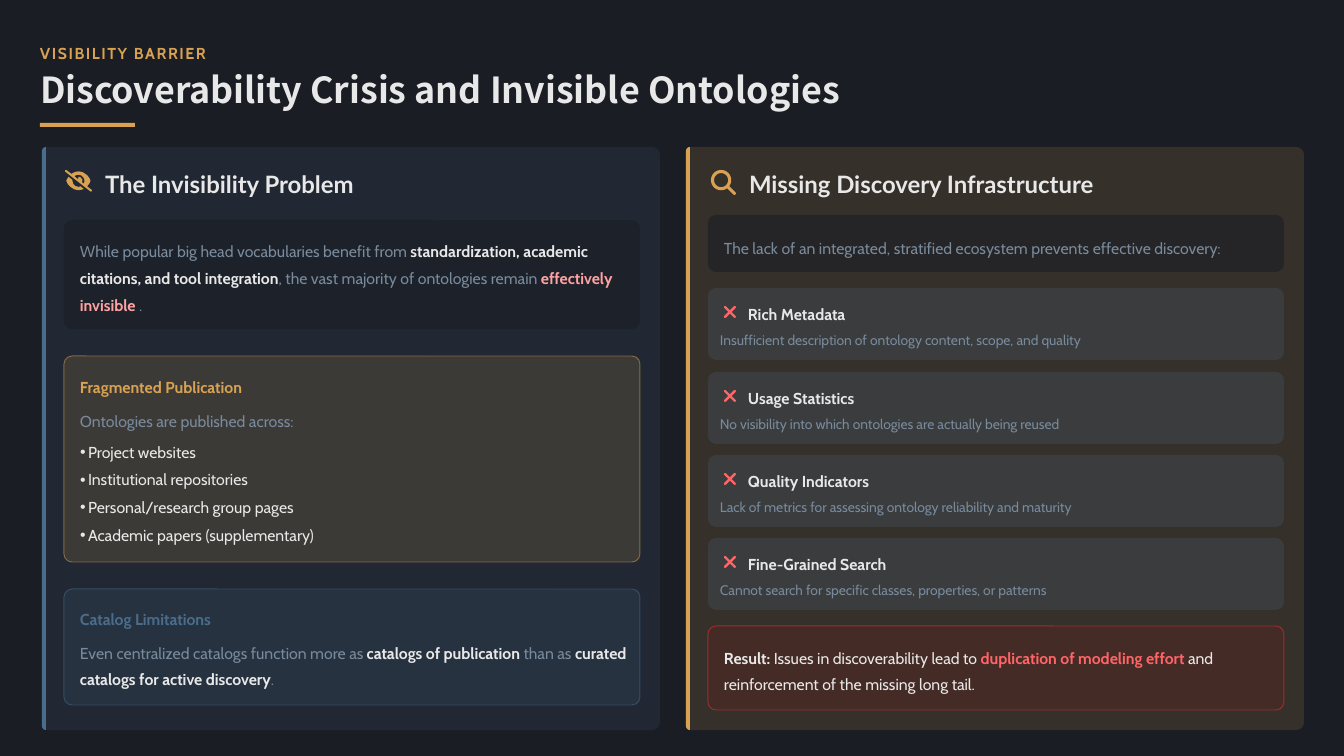
import math
from dataclasses import dataclass

import lxml.etree
import pptx
import pptx.dml.color
import pptx.enum.shapes
import pptx.enum.text
import pptx.oxml.ns
import pptx.util

PX = 12192000 / 1344
SHAPE = pptx.enum.shapes.MSO_SHAPE
TEXT = pptx.enum.text
qn = pptx.oxml.ns.qn


@dataclass(frozen=True)
class Theme:
    back: str = "1A1D24"
    gold: str = "D8A252"
    blue: str = "4A6D8C"
    light: str = "E8E8E8"
    mute: str = "788A9C"
    pink: str = "FFA2A2"
    coral: str = "FF6467"
    red: str = "FB2C36"
    maroon: str = "82181A"
    font: str = "Cabin"
    head: str = "Lato"
    title: str = "Noto Sans CJK SC"
    body: float = 11.3
    small: float = 9.9
    large: float = 17.1
    huge: float = 25.6


T = Theme()

# Icon outlines, each on its own unit grid
EYE = [
    [(24, 0), (5, 9), (0, 24), (9, 43), (601, 507), (616, 512), (635, 503),
     (640, 488), (631, 469), (526, 387), (575, 326), (606, 268), (606, 244),
     (570, 175), (513, 113), (420, 52), (320, 32), (230, 49), (151, 93), (39, 5)],
    [(223, 150), (268, 121), (320, 112), (392, 131), (445, 184), (464, 256),
     (459, 293), (447, 325), (408, 295), (413, 231), (380, 180), (324, 160),
     (317, 172), (320, 192), (313, 220)],
    [(373, 390), (320, 400), (248, 381), (195, 328), (176, 256), (177, 236),
     (83, 162), (34, 244), (34, 268), (70, 337), (128, 399), (220, 460),
     (320, 480), (386, 472), (446, 448)],
]


def px(n):
    return pptx.util.Emu(round(n * PX))


def rgb(code):
    return pptx.dml.color.RGBColor.from_string(code)


def arc(x, y, r, start, end, steps=36):
    turns = [math.radians(start + (end - start) * i / steps) for i in range(steps + 1)]
    return [(x + r * math.cos(a), y + r * math.sin(a)) for a in turns]


def lens():
    handle = [(503, 457), (512, 480), (503, 503), (480, 512), (457, 503)]
    return [arc(208, 208, 208, 54, 396) + handle, arc(208, 208, 144, 360, 0)]


def cross():
    arm = [(0, -45), (105, -151), (128, -160), (151, -151), (160, -128), (151, -105)]
    points = []
    for _ in range(4):
        points += arm
        arm = [(-y, x) for x, y in arm]
    return [points]


def fade(parent, alpha):
    tone = parent.find(qn("a:solidFill")).find(qn("a:srgbClr"))
    lxml.etree.SubElement(tone, qn("a:alpha")).set("val", str(alpha * 1000))


def paint(shape, color, alpha=100, edge=None):
    shape.shadow.inherit = False
    shape.fill.solid()
    shape.fill.fore_color.rgb = rgb(color)
    props = shape._element.spPr
    if alpha < 100:
        fade(props, alpha)
    if edge:
        shape.line.color.rgb = rgb(edge)
        shape.line.width = pptx.util.Pt(0.67)
        fade(props.find(qn("a:ln")), 50)
    else:
        shape.line.fill.background()


def draw(slide, x, y, unit, loops, color, alpha=100):
    """Draw closed loops whose grid unit is a number of px."""
    pen = slide.shapes.build_freeform(*loops[0][0], scale=unit * PX)
    for i, loop in enumerate(loops):
        if i:
            pen.move_to(*loop[0])
        pen.add_line_segments(loop[1:], close=True)
    paint(pen.convert_to_shape(px(x), px(y)), color, alpha)


def box(slide, x, y, w, h, color, alpha, edge=None):
    shape = slide.shapes.add_shape(SHAPE.ROUNDED_RECTANGLE, px(x), px(y), px(w), px(h))
    shape.adjustments[0] = 8 / h
    paint(shape, color, alpha, edge)


def place(shape, x, y, w, h):
    shape.left, shape.top, shape.width, shape.height = px(x), px(y), px(w), px(h)
    frame = shape.text_frame
    frame.auto_size = TEXT.MSO_AUTO_SIZE.NONE
    frame.word_wrap = True
    frame.vertical_anchor = TEXT.MSO_ANCHOR.MIDDLE
    frame.margin_left = frame.margin_top = frame.margin_right = frame.margin_bottom = 0
    return frame


def style(para, color, size, bold, font, lead, before=0):
    para.alignment = TEXT.PP_ALIGN.LEFT
    para.line_spacing = lead
    para.space_before = pptx.util.Pt(before)
    para.space_after = pptx.util.Pt(0)
    para.font.size = pptx.util.Pt(size)
    para.font.name = font
    para.font.bold = bold
    para.font.color.rgb = rgb(color)


def write(slide, x, y, w, h, spans, color=T.mute, size=T.body, bold=False,
          font=T.font, lead=1.2, shape=None):
    """Write one paragraph; a span is plain text or (text, color, bold)."""
    shape = shape or slide.shapes.add_textbox(0, 0, 0, 0)
    para = place(shape, x, y, w, h).paragraphs[0]
    style(para, color, size, bold, font, lead)
    for span in [spans] if isinstance(spans, str) else spans:
        run = para.add_run()
        if isinstance(span, str):
            run.text = span
        else:
            run.text, tone, run.font.bold = span
            run.font.color.rgb = rgb(tone)
    return para


def bullets(shape, x, y, w, h, lines):
    frame = place(shape, x, y, w, h)
    for i, line in enumerate(lines):
        para = frame.add_paragraph() if i else frame.paragraphs[0]
        para.text = line
        props = para._p.get_or_add_pPr()
        props.set("marL", str(px(8)))
        props.set("indent", str(px(-8)))
        lxml.etree.SubElement(props, qn("a:buChar")).set("char", "•")
        style(para, T.light, T.body, False, T.font, 1.2, 3.4 if i else 0)


def panel(slide, x, color, title, icon, unit):
    # Tenth-px grid keeps the corners smooth
    left = arc(40, 5790, 40, 90, 180, 8) + arc(40, 40, 40, 180, 270, 8)
    right = arc(6100, 80, 80, 270, 360, 8) + arc(6100, 5750, 80, 0, 90, 8)
    draw(slide, x, 147, 0.1, [left + right], color, 15)
    draw(slide, x, 147, 0.1, [left], color)
    draw(slide, x + 23 if icon is EYE else x + 25, 170, unit, icon, T.gold)
    write(slide, x + 63, 167, 500, 32, title, T.light, T.large, True, T.head, 1.1)


def item(slide, y, name, note):
    box(slide, 708, y, 576, 72, T.blue, 20)
    draw(slide, 730, y + 24, 12 / 320, cross(), T.coral)
    write(slide, 748, y + 12, 500, 24, name, T.light, bold=True)
    write(slide, 720, y + 40, 560, 20, note, size=T.small)


def main():
    deck = pptx.Presentation()
    deck.slide_width, deck.slide_height = px(1344), px(756)
    slide = deck.slides.add_slide(deck.slide_layouts[1])
    slide.background.fill.solid()
    slide.background.fill.fore_color.rgb = rgb(T.back)

    # Header
    label = write(slide, 40, 39, 1272, 24, "VISIBILITY BARRIER", T.gold, bold=True)
    label.runs[0]._r.get_or_add_rPr().set("spc", "110")
    write(slide, 40, 72, 1282, 39, "Discoverability Crisis and Invisible Ontologies",
          T.light, T.huge, True, T.title, 0.9, slide.shapes.title)
    rule = slide.shapes.add_shape(SHAPE.RECTANGLE, px(40), px(123), px(95), px(4))
    paint(rule, T.gold)

    # Left panel
    panel(slide, 42, T.blue, "The Invisibility Problem", EYE, 27 / 640)
    box(slide, 64, 220, 576, 109, T.back, 60)
    write(slide, 80, 236, 552, 77, [
        "While popular big head vocabularies benefit from ",
        ("standardization, academic citations, and tool integration", T.light, True),
        ", the vast majority of ontologies remain ",
        ("effectively invisible ", T.pink, True), "."], lead=1.4)
    box(slide, 64, 356, 576, 206, T.gold, 15, T.gold)
    write(slide, 80, 373, 551, 24, "Fragmented Publication", T.gold, bold=True)
    write(slide, 80, 404, 551, 26, "Ontologies are published across:", lead=1.4)
    listing = slide.placeholders[1]
    bullets(listing, 80, 438, 551, 107, [
        "Project websites", "Institutional repositories",
        "Personal/research group pages", "Academic papers (supplementary)"])
    slide.shapes._spTree.append(listing._element)  # bring above its box
    box(slide, 64, 589, 576, 116, T.blue, 15, T.blue)
    write(slide, 80, 605, 551, 24, "Catalog Limitations", T.blue, bold=True)
    write(slide, 80, 637, 551, 51, [
        "Even centralized catalogs function more as ",
        ("catalogs of publication", T.light, True), " than as ",
        ("curated catalogs for active discovery", T.light, True), "."], lead=1.4)

    # Right panel
    panel(slide, 686, T.gold, "Missing Discovery Infrastructure", lens(), 25 / 512)
    box(slide, 708, 215, 576, 57, T.back, 60)
    write(slide, 724, 231, 552, 26, "The lack of an integrated, stratified ecosystem "
          "prevents effective discovery:", lead=1.4)
    items = [
        ("Rich Metadata", "Insufficient description of ontology content, scope, and quality"),
        ("Usage Statistics", "No visibility into which ontologies are actually being reused"),
        ("Quality Indicators", "Lack of metrics for assessing ontology reliability and maturity"),
        ("Fine-Grained Search", "Cannot search for specific classes, properties, or patterns"),
    ]
    for i, (name, note) in enumerate(items):
        item(slide, 288 + round(83.5 * i), name, note)
    box(slide, 708, 626, 576, 84, T.maroon, 20, T.red)
    write(slide, 724, 642, 551, 51, [
        ("Result:", T.light, True), " Issues in discoverability lead to ",
        ("duplication of modeling effort", T.coral, True),
        " and reinforcement of the missing long tail."], T.light, lead=1.4)

    deck.save("out.pptx")


if __name__ == "__main__":
    main()
